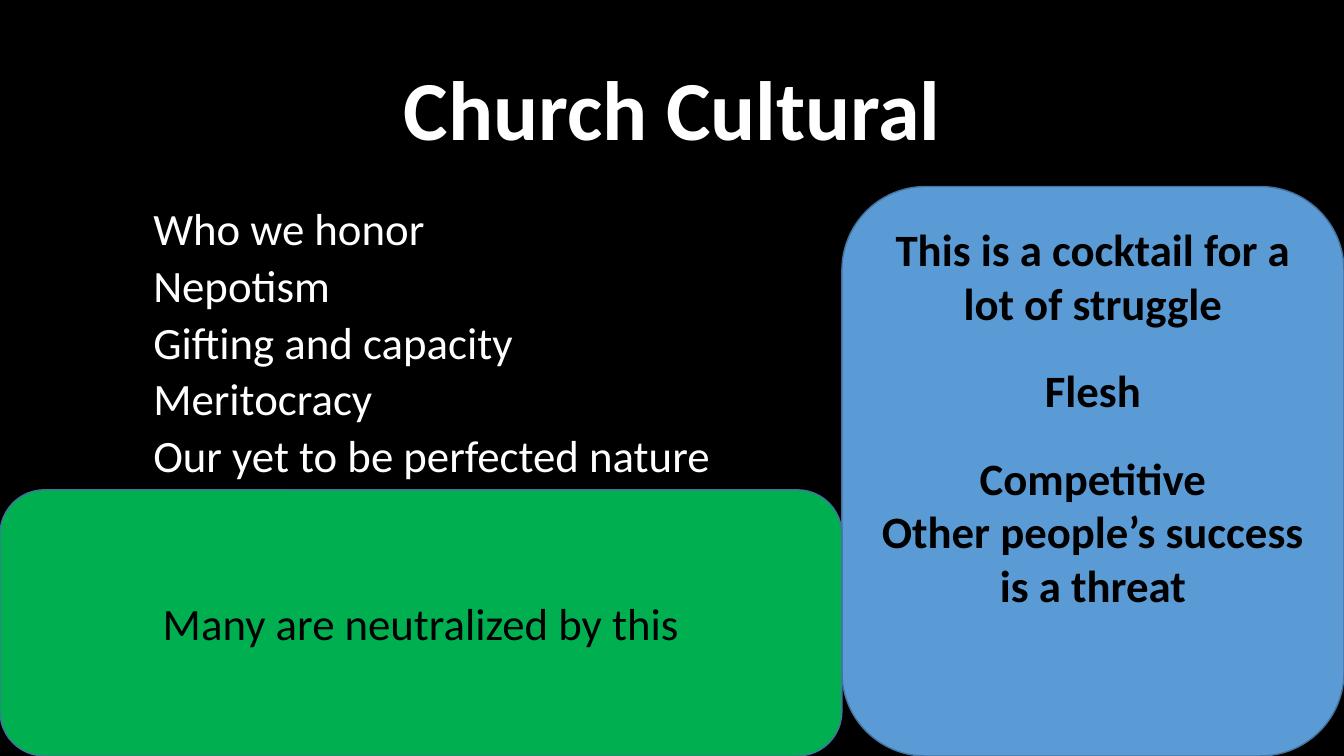
from lxml import etree
from pptx import Presentation
from pptx.dml.color import RGBColor
from pptx.enum.shapes import MSO_SHAPE
from pptx.enum.text import MSO_ANCHOR, MSO_AUTO_SIZE, PP_ALIGN
from pptx.oxml.ns import qn
from pptx.util import Inches, Pt

ROUND = MSO_SHAPE.ROUNDED_RECTANGLE
MIDDLE, TOP = MSO_ANCHOR.MIDDLE, MSO_ANCHOR.TOP
FIXED = MSO_AUTO_SIZE.NONE
CENTER, LEFT = PP_ALIGN.CENTER, PP_ALIGN.LEFT

COLORS = {"black": "000000", "white": "FFFFFF", "blue": "5B9BD5",
          "green": "00B050", "edge": "43739E"}


class Deck:
    font = "Calibri"

    def __init__(self, wide, high):
        self.prs = Presentation()
        self.prs.slide_width, self.prs.slide_height = Inches(wide), Inches(high)
        self.slide = self.prs.slides.add_slide(self.prs.slide_layouts[1])
        self.paint(self.slide.background.fill, "black")

    def paint(self, fill, color):
        fill.solid()
        fill.fore_color.rgb = RGBColor.from_string(COLORS[color])

    def place(self, shape, box):
        shape.left, shape.top, shape.width, shape.height = map(Inches, box)

    def label(self, shape, lines, color, size=32, bold=False,
              align=CENTER, anchor=MIDDLE):
        frame = shape.text_frame
        frame.word_wrap = True
        frame.auto_size = FIXED
        frame.vertical_anchor = anchor
        frame.text = "\n".join(lines)
        for para in frame.paragraphs:
            para.alignment = align
            font = para.font
            font.name, font.size, font.bold = self.font, Pt(size), bold
            font.color.rgb = RGBColor.from_string(COLORS[color])
        return frame

    def title(self, text, box):
        shape = self.slide.shapes.title
        self.place(shape, box)
        frame = self.label(shape, [text], "white", size=60, bold=True)
        frame.paragraphs[0].line_spacing = 0.9

    def list(self, lines, box):
        shape = self.slide.placeholders[1]
        self.place(shape, box)
        frame = self.label(shape, lines, "white", align=LEFT, anchor=TOP)
        for para in frame.paragraphs:
            para.level = 1
            para.line_spacing = 0.9
            para.space_before = Pt(6)
            # Indent without a bullet
            props = para._p.get_or_add_pPr()
            props.set("marL", str(Inches(0.88)))
            props.set("indent", str(Inches(-0.38)))
            mark = etree.Element(qn("a:buNone"))
            props.find(qn("a:spcBef")).addnext(mark)

    def panel(self, lines, box, fill, bold=False):
        shape = self.slide.shapes.add_shape(ROUND, *map(Inches, box))
        shape.shadow.inherit = False
        self.paint(shape.fill, fill)
        self.paint(shape.line.fill, "edge")
        shape.line.width = Pt(1)
        return self.label(shape, lines, "black", bold=bold)


def main():
    deck = Deck(13.33, 7.5)

    # Heading and list
    deck.title("Church Cultural", (0.92, 0.4, 11.5, 1.45))
    deck.list(["Who we honor", "Nepotism", "Gifting and capacity",
               "Meritocracy", "Our yet to be perfected nature"],
              (0.92, 2, 11.5, 4.76))

    # Struggle panel, with text raised and split in groups
    frame = deck.panel(["This is a cocktail for a lot of struggle", "Flesh",
                        "Competitive", "Other people’s success is a threat"],
                       (8.35, 1.85, 4.98, 5.65), "blue", bold=True)
    frame.margin_bottom = Inches(1.13)
    for para in frame.paragraphs[1:3]:
        para.space_before = Pt(24)

    # Outcome panel
    deck.panel(["Many are neutralized by this"], (0, 4.86, 8.35, 2.64), "green")

    deck.prs.save("out.pptx")


if __name__ == "__main__":
    main()
